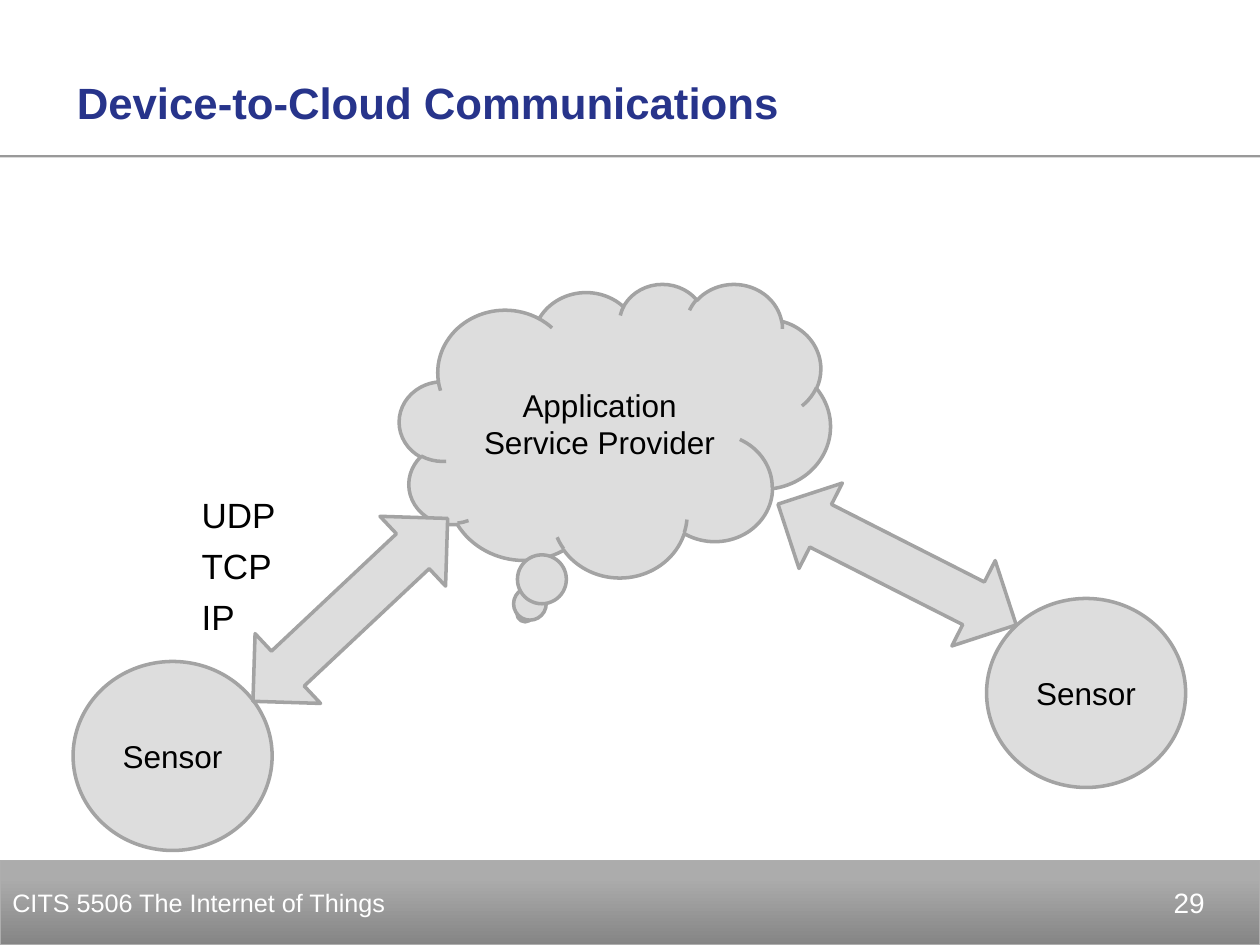
from pptx import Presentation
from pptx.dml.color import RGBColor
from pptx.enum.shapes import MSO_SHAPE
from pptx.enum.text import MSO_ANCHOR, PP_ALIGN
from pptx.oxml.ns import qn
from pptx.util import Inches, Pt
from lxml.etree import SubElement


def color(value):
    return RGBColor.from_string(value)


def place(shape, box):
    shape.left, shape.top, shape.width, shape.height = map(Inches, box)


def write(shape, lines, size, ink="000000", align=PP_ALIGN.LEFT,
          anchor=MSO_ANCHOR.MIDDLE, bold=False, gap=0):
    frame = shape.text_frame
    frame.word_wrap = True
    frame.vertical_anchor = anchor
    for index, line in enumerate(lines):
        para = frame.paragraphs[0] if index == 0 else frame.add_paragraph()
        para.text = line
        para.alignment = align
        para.space_before = Pt(gap if index else 0)
        properties = para._p.get_or_add_pPr()
        properties.set("marL", "0")
        properties.set("indent", "0")
        SubElement(properties, qn("a:buNone"))
        font = para.font
        font.name, font.size, font.bold = "Arial", Pt(size), bold
        font.color.rgb = color(ink)


def add_panel(page, box):
    panel = page.shapes.add_shape(MSO_SHAPE.RECTANGLE, *map(Inches, box))
    panel.shadow.inherit = False
    panel.fill.solid()
    panel.fill.fore_color.rgb = color("FFFFFF")
    panel.line.fill.background()
    return panel


def fill_placeholder(page, placeholder, box, lines, size, **style):
    place(placeholder, box)
    page.shapes._spTree.append(placeholder._element)
    write(placeholder, lines, size, anchor=MSO_ANCHOR.TOP, **style)


def add_footer(page, box, course, number):
    left, top, width, height = box
    band = add_panel(page, box)
    band.fill.gradient()
    band.fill.gradient_angle = 90
    stops = band.fill.gradient_stops
    for stop, position, shade in zip(stops, (0, 0.8), ("858585", "ACACAC")):
        stop.position = position
        stop.color.rgb = color(shade)
    band.line.color.rgb = color("AEAEAE")
    band.line.width = Pt(0.75)
    write(band, [course], 14.4, "FFFFFF")
    number_box = page.shapes.add_textbox(
        *map(Inches, (left + width - 2.67, top, 2.33, height)))
    write(number_box, [number], 16, "FFFFFF", PP_ALIGN.RIGHT)


def add_node(page, kind, box, label=None, rotation=0):
    node = page.shapes.add_shape(kind, *map(Inches, box))
    node.shadow.inherit = False
    node.rotation = rotation
    node.fill.solid()
    node.fill.fore_color.rgb = color("DDDDDD")
    node.line.color.rgb = color("A3A3A3")
    node.line.width = Pt(2)
    if label:
        write(node, [label], 18, align=PP_ALIGN.CENTER)


def add_diagram(page, box):
    left, top, _, _ = box
    add_node(page, MSO_SHAPE.CLOUD_CALLOUT, (left + 2.59, top, 3.42, 2.33),
             "Application Service Provider")
    for x, y in ((0, 3), (7.25, 2.5)):
        add_node(page, MSO_SHAPE.OVAL, (left + x, top + y, 1.58, 1.5), "Sensor")
    for x, y, rotation in ((1.14, 2.21, 136.8), (5.48, 1.85, 206.9)):
        add_node(page, MSO_SHAPE.LEFT_RIGHT_ARROW,
                 (left + x, top + y, 2.12, 0.76), rotation=rotation)


def main():
    deck = Presentation()
    deck.slide_width, deck.slide_height = Inches(10), Inches(7.5)
    page = deck.slides.add_slide(deck.slide_layouts[1])
    page.background.fill.solid()
    page.background.fill.fore_color.rgb = color("999999")
    title, protocols = page.placeholders

    add_panel(page, (0, 0, 10, 1.23))
    add_panel(page, (0, 1.25, 10, 5.94))
    add_footer(page, (0, 6.83, 10, 0.67), "CITS 5506 The Internet of Things", "29")
    fill_placeholder(page, protocols, (1.5, 3.87, 1.5, 1.25),
                     ["UDP", "TCP", "IP"], 20, gap=5)
    fill_placeholder(page, title, (0.51, 0.55, 6.61, 0.6),
                     ["Device-to-Cloud Communications"], 25,
                     ink="27348B", bold=True)
    add_diagram(page, (0.58, 2.25, 8.83, 4.5))
    deck.save("out.pptx")


if __name__ == "__main__":
    main()
